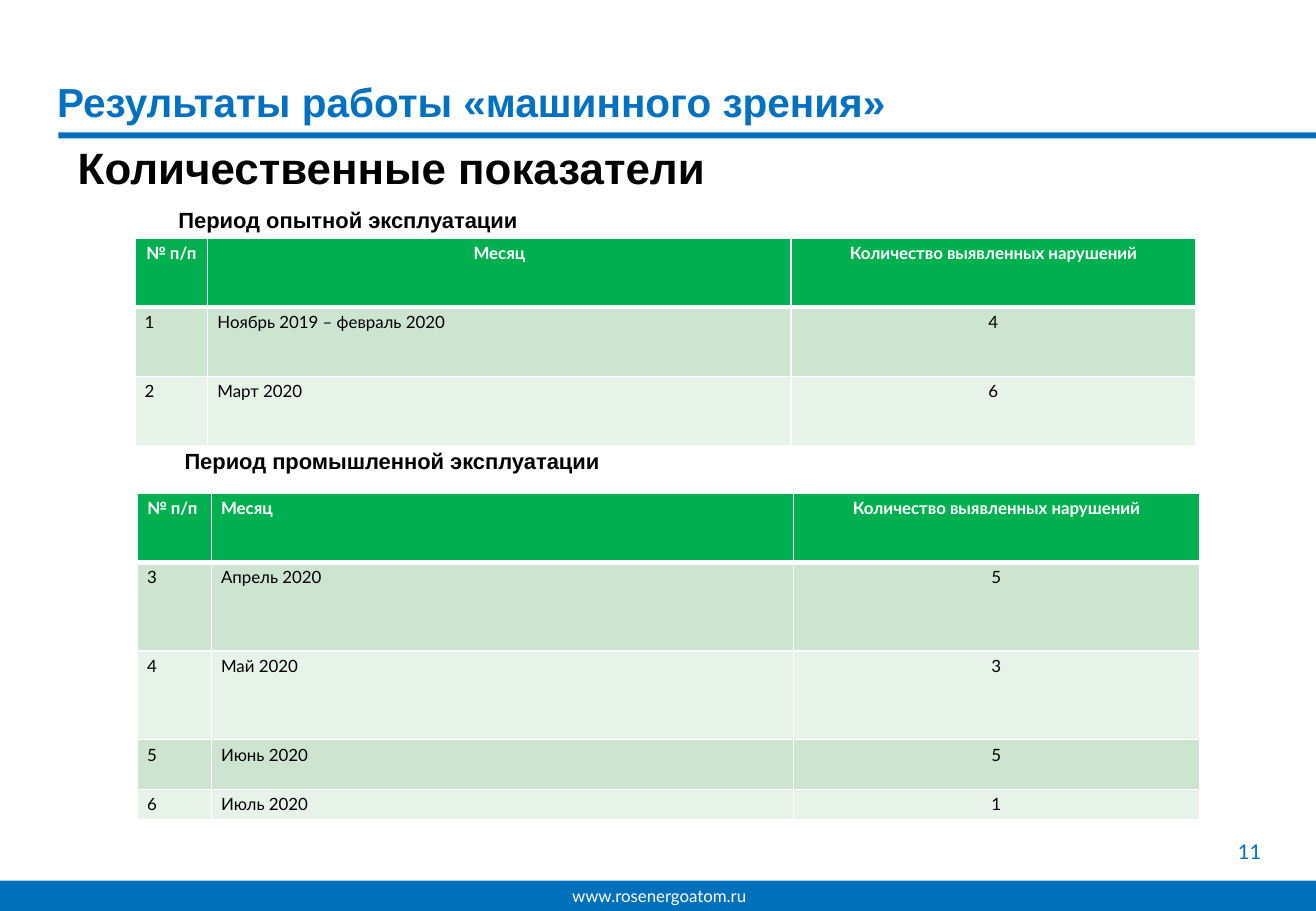
import pptx
import pptx.dml.color
import pptx.enum.shapes
import pptx.enum.text
import pptx.oxml
import pptx.oxml.ns
import pptx.util

Inches = pptx.util.Inches
LEFT = pptx.enum.text.PP_ALIGN.LEFT
CENTER = pptx.enum.text.PP_ALIGN.CENTER
RIGHT = pptx.enum.text.PP_ALIGN.RIGHT
TOP = pptx.enum.text.MSO_ANCHOR.TOP
MIDDLE = pptx.enum.text.MSO_ANCHOR.MIDDLE
SLIDE_WIDTH, SLIDE_HEIGHT = 10.83, 7.5
HEADINGS = ["№ п/п", "Месяц", "Количество выявленных нарушений"]


def rgb(color):
    return pptx.dml.color.RGBColor.from_string(color)


def lengths(box):
    return [Inches(length) for length in box]


def write(paragraph, text, size, color, font="Arial", bold=False, align=LEFT):
    paragraph.alignment = align
    run = paragraph.add_run()
    run.text = text
    run.font.name = font
    run.font.size = pptx.util.Pt(size)
    run.font.bold = bold
    run.font.color.rgb = rgb(color)


def set_frame(frame, insets, anchor=TOP):
    frame.word_wrap = True
    frame.auto_size = pptx.enum.text.MSO_AUTO_SIZE.NONE
    frame.vertical_anchor = anchor
    frame.margin_left = frame.margin_right = Inches(insets[0])
    frame.margin_top = frame.margin_bottom = Inches(insets[1])
    return frame.paragraphs[0]


def add_text(slide, box, text, size, color, insets=(0.1, 0.05), anchor=TOP,
             spacing=None, **style):
    frame = slide.shapes.add_textbox(*lengths(box)).text_frame
    paragraph = set_frame(frame, insets, anchor)
    paragraph.line_spacing = spacing
    write(paragraph, text, size, color, **style)


def add_bar(slide, box):
    bar = slide.shapes.add_shape(pptx.enum.shapes.MSO_SHAPE.RECTANGLE, *lengths(box))
    bar.shadow.inherit = False
    bar.fill.solid()
    bar.fill.fore_color.rgb = rgb("0070BA")
    bar.line.fill.background()


def add_title(slide, box, text):
    title = slide.shapes.title
    title.left, title.top, title.width, title.height = lengths(box)
    paragraph = set_frame(title.text_frame, (0.08, 0.04), MIDDLE)
    paragraph.line_spacing = 0.9
    write(paragraph, text, 24, "0070C0", bold=True)


def add_footer(slide, box, address, number):
    left, top, width, height = box
    add_bar(slide, box)
    add_text(slide, (left + (width - 1.73) / 2 + 0.06, top - 0.01, 1.73, 0.27),
             address, 10, "FFFFFF", font="Lato")
    add_text(slide, (left + width - 1.93, top - 0.47, 1.68, 0.46), number, 12, "0070C0",
             insets=(0.2, 0.1), anchor=MIDDLE, font="Lato", align=RIGHT)


def set_borders(cell, **widths):
    properties = cell._tc.get_or_add_tcPr()
    for side in "LRTB":
        properties.append(pptx.oxml.parse_xml(
            f'<a:ln{side} {pptx.oxml.ns.nsdecls("a")} w="{pptx.util.Pt(widths.get(side, 1))}">'
            f'<a:solidFill><a:srgbClr val="FFFFFF"/></a:solidFill></a:ln{side}>'))


def add_violations(slide, corner, columns, heights, records, heading_aligns):
    left, top = corner
    table = slide.shapes.add_table(
        len(heights), len(columns),
        *lengths((left, top, sum(columns), sum(heights)))).table
    for column, width in zip(table.columns, columns):
        column.width = Inches(width)
    for row, height in zip(table.rows, heights):
        row.height = Inches(height)
    for row_index, values in enumerate([HEADINGS, *records]):
        heading = row_index == 0
        aligns = heading_aligns if heading else (LEFT, LEFT, CENTER)
        fill = "00B050" if heading else ("E7F2E9", "CCE4D0")[row_index % 2]
        for column_index, (value, align) in enumerate(zip(values, aligns)):
            cell = table.cell(row_index, column_index)
            cell.margin_left = cell.margin_right = Inches(0.08)
            cell.margin_top = cell.margin_bottom = Inches(0.04)
            set_borders(cell, B=3 if heading else 1, T=3 if row_index == 1 else 1)
            cell.fill.solid()
            cell.fill.fore_color.rgb = rgb(fill)
            write(cell.text_frame.paragraphs[0], value, 10,
                  "FFFFFF" if heading else "000000", "Lato", heading, align)


def add_period(slide, caption_box, caption, *table_layout):
    add_text(slide, caption_box, caption, 13, "000000", spacing=0.9, bold=True)
    add_violations(slide, *table_layout)


def main():
    presentation = pptx.Presentation()
    presentation.slide_width = Inches(SLIDE_WIDTH)
    presentation.slide_height = Inches(SLIDE_HEIGHT)
    slide = presentation.slides.add_slide(presentation.slide_layouts[5])

    add_bar(slide, (0.48, 1.09, SLIDE_WIDTH - 0.48, 0.05))
    add_footer(slide, (0, 7.25, SLIDE_WIDTH, 0.25), "www.rosenergoatom.ru", "11")
    add_title(slide, (0.39, 0.45, 10.22, 0.82), "Результаты работы «машинного зрения»")
    add_text(slide, (0.64, 1.21, 7.77, 0.39), "Количественные показатели", 26, "000000",
             insets=(0, 0), spacing=0.9, bold=True)

    trial = [("1", "Ноябрь 2019 – февраль 2020", "4"), ("2", "Март 2020", "6")]
    add_period(slide, (1.37, 1.68, 7.49, 0.3), "Период опытной эксплуатации",
               (1.11, 1.96), (0.6, 4.8, 3.33), [0.57] * 3, trial,
               (CENTER, CENTER, CENTER))

    industrial = [("3", "Апрель 2020", "5"), ("4", "Май 2020", "3"),
                  ("5", "Июнь 2020", "5"), ("6", "Июль 2020", "1")]
    add_period(slide, (1.42, 3.66, 4.41, 0.3), "Период промышленной эксплуатации",
               (1.13, 4.06), (0.61, 4.79, 3.34), [0.57, 0.73, 0.73, 0.41, 0.24],
               industrial, (LEFT, LEFT, CENTER))

    presentation.save("out.pptx")


if __name__ == "__main__":
    main()
